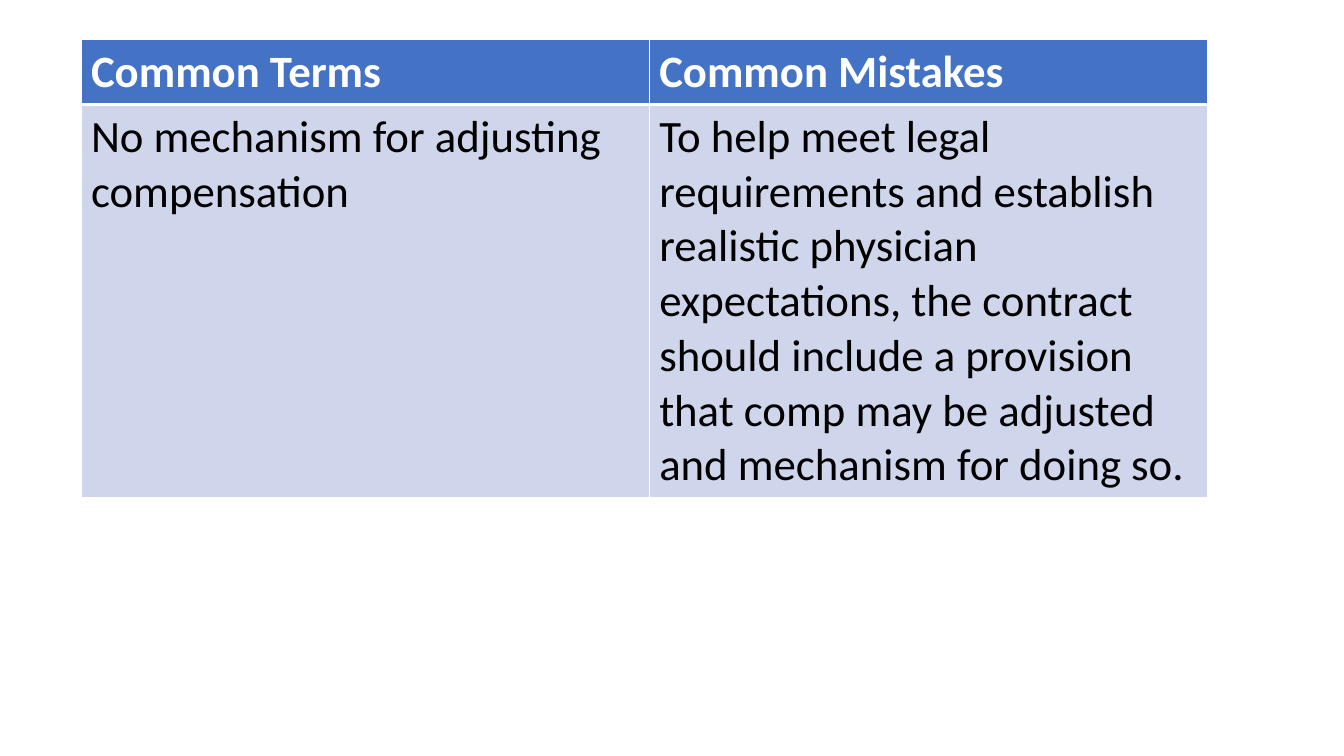
import pptx
import pptx.util
import pptx.dml.color
import pptx.oxml
import pptx.oxml.ns
from pptx.util import Cm

HUES = {"head": "4472C4", "body": "CFD5EA", "white": "FFFFFF", "black": "000000"}

TERMS = [
    ["Common Terms", "Common Mistakes"],
    [
        "No mechanism for adjusting compensation",
        "To help meet legal requirements and establish realistic physician "
        "expectations, the contract should include a provision that comp may "
        "be adjusted and mechanism for doing so.",
    ],
]
WIDTHS = [14.32, 14.06]
HEIGHTS = [1.63, 9.9]


def color(name):
    return pptx.dml.color.RGBColor.from_string(HUES[name])


def add_edges(cell, edges):
    """Draw white cell borders; edges maps a side to its width in points."""
    props = cell._tc.get_or_add_tcPr()
    for spot, (side, width) in enumerate(edges.items()):
        line = pptx.oxml.parse_xml(
            f'<a:ln{side} {pptx.oxml.ns.nsdecls("a")} w="{pptx.util.Pt(width)}">'
            f'<a:solidFill><a:srgbClr val="{HUES["white"]}"/></a:solidFill>'
            f'</a:ln{side}>'
        )
        props.insert(spot, line)


def fill_cell(cell, text, head):
    cell.fill.solid()
    cell.fill.fore_color.rgb = color("head" if head else "body")
    run = cell.text_frame.paragraphs[0].add_run()
    run.text = text
    run.font.name = "Calibri"
    run.font.size = pptx.util.Pt(32)
    run.font.bold = head
    run.font.color.rgb = color("white" if head else "black")
    # The rule between header and body is thicker
    top, base = (1, 3) if head else (3, 1)
    add_edges(cell, {"L": 1, "R": 1, "T": top, "B": base})


def add_terms(slide):
    frame = slide.shapes.add_table(
        len(TERMS), len(WIDTHS), Cm(2.04), Cm(1),
        Cm(sum(WIDTHS)), Cm(sum(HEIGHTS)),
    )
    table = frame.table
    for col, width in zip(table.columns, WIDTHS):
        col.width = Cm(width)
    for row, height, texts in zip(table.rows, HEIGHTS, TERMS):
        row.height = Cm(height)
        for cell, text in zip(row.cells, texts):
            fill_cell(cell, text, texts is TERMS[0])


def main():
    # Slide without a title
    deck = pptx.Presentation()
    deck.slide_width = Cm(33.87)
    deck.slide_height = Cm(19.05)
    slide = deck.slides.add_slide(deck.slide_layouts[6])

    # Table of contract terms
    add_terms(slide)
    deck.save("out.pptx")


if __name__ == "__main__":
    main()
